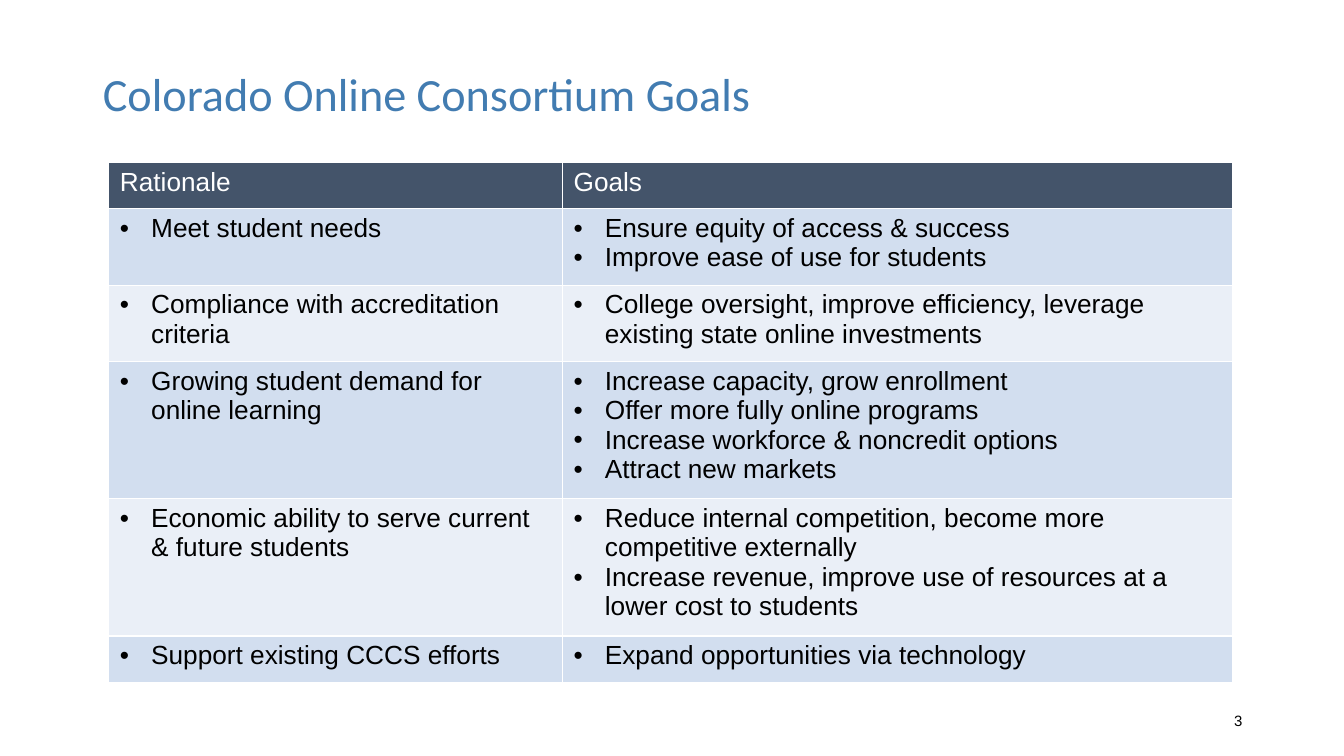
"""Build the slide of consortium goals."""
from lxml.etree import SubElement
from pptx import Presentation
from pptx.dml.color import RGBColor
from pptx.enum.text import MSO_ANCHOR, PP_ALIGN
from pptx.oxml.ns import qn
from pptx.util import Inches, Pt

TITLE = "Colorado Online Consortium Goals"
PAGE = "3"
HEADS = ("Rationale", "Goals")
GOALS = [
    ("Meet student needs",
     ["Ensure equity of access & success",
      "Improve ease of use for students"]),
    ("Compliance with accreditation criteria",
     ["College oversight, improve efficiency, leverage existing state online investments"]),
    ("Growing student demand for online learning",
     ["Increase capacity, grow enrollment",
      "Offer more fully online programs",
      "Increase workforce & noncredit options",
      "Attract new markets"]),
    ("Economic ability to serve current & future students",
     ["Reduce internal competition, become more competitive externally",
      "Increase revenue, improve use of resources at a lower cost to students"]),
    ("Support existing CCCS efforts",
     ["Expand opportunities via technology"]),
]
WIDTHS = (4.5, 6.65)
HEIGHTS = (0.46, 0.76, 0.76, 1.36, 1.36, 0.46)
HEAD_FILL = "44546A"
BANDS = ("D2DEEF", "EAEFF7")
INDENT = 0.31


def paint(font, size, color, name="Arial"):
    font.size, font.name, font.bold = Pt(size), name, False
    font.color.rgb = RGBColor.from_string(color)


def write(para, text, size, color, name="Arial"):
    run = para.add_run()
    run.text = text
    paint(run.font, size, color, name)


def bullet(para):
    props = para._p.get_or_add_pPr()
    props.set("marL", str(Inches(INDENT)))
    props.set("indent", str(-Inches(INDENT)))
    SubElement(props, qn("a:buFont"), typeface="Arial")
    SubElement(props, qn("a:buChar"), char="•")


def border(cell):
    props = cell._tc.get_or_add_tcPr()
    for side in ("lnL", "lnR", "lnT", "lnB"):
        line = SubElement(props, qn("a:" + side), w=str(Pt(1)))
        fill = SubElement(line, qn("a:solidFill"))
        SubElement(fill, qn("a:srgbClr"), val="FFFFFF")


def fill_cell(cell, lines, fill, color, listed):
    border(cell)
    cell.fill.solid()
    cell.fill.fore_color.rgb = RGBColor.from_string(fill)
    cell.margin_left = cell.margin_right = Inches(0.11)
    cell.margin_top = cell.margin_bottom = Inches(0.05)
    frame = cell.text_frame
    for i, line in enumerate(lines):
        para = frame.add_paragraph() if i else frame.paragraphs[0]
        if listed:
            bullet(para)
        write(para, line, 18.7, color)


def add_title(slide):
    title = slide.shapes.title
    title.left, title.top = Inches(0.92), Inches(0.4)
    title.width, title.height = Inches(11.5), Inches(1.12)
    title.text_frame.vertical_anchor = MSO_ANCHOR.MIDDLE
    para = title.text_frame.paragraphs[0]
    para.alignment, para.line_spacing = PP_ALIGN.LEFT, 0.9
    write(para, TITLE, 33, "427CB1", "Calibri")


def add_goals(slide):
    table = slide.shapes.add_table(
        len(HEIGHTS), len(WIDTHS), Inches(1.08), Inches(1.61),
        Inches(sum(WIDTHS)), Inches(sum(HEIGHTS))).table
    for col, width in zip(table.columns, WIDTHS):
        col.width = Inches(width)
    for row, height in zip(table.rows, HEIGHTS):
        row.height = Inches(height)
    for c, head in enumerate(HEADS):
        fill_cell(table.cell(0, c), [head], HEAD_FILL, "FFFFFF", False)
    for r, (reason, goals) in enumerate(GOALS):
        for c, lines in enumerate(([reason], goals)):
            fill_cell(table.cell(r + 1, c), lines, BANDS[r % 2], "000000", True)


def add_page(slide):
    box = slide.shapes.add_textbox(Inches(9.42), Inches(6.95), Inches(3), Inches(0.4))
    frame = box.text_frame
    frame.word_wrap = True
    frame.vertical_anchor = MSO_ANCHOR.MIDDLE
    para = frame.paragraphs[0]
    para.alignment = PP_ALIGN.RIGHT
    write(para, PAGE, 10.7, "000000")


def main():
    deck = Presentation()
    deck.slide_width, deck.slide_height = Inches(13.33), Inches(7.5)
    slide = deck.slides.add_slide(deck.slide_layouts[5])
    add_title(slide)
    add_page(slide)
    add_goals(slide)
    deck.save("out.pptx")


if __name__ == "__main__":
    main()
